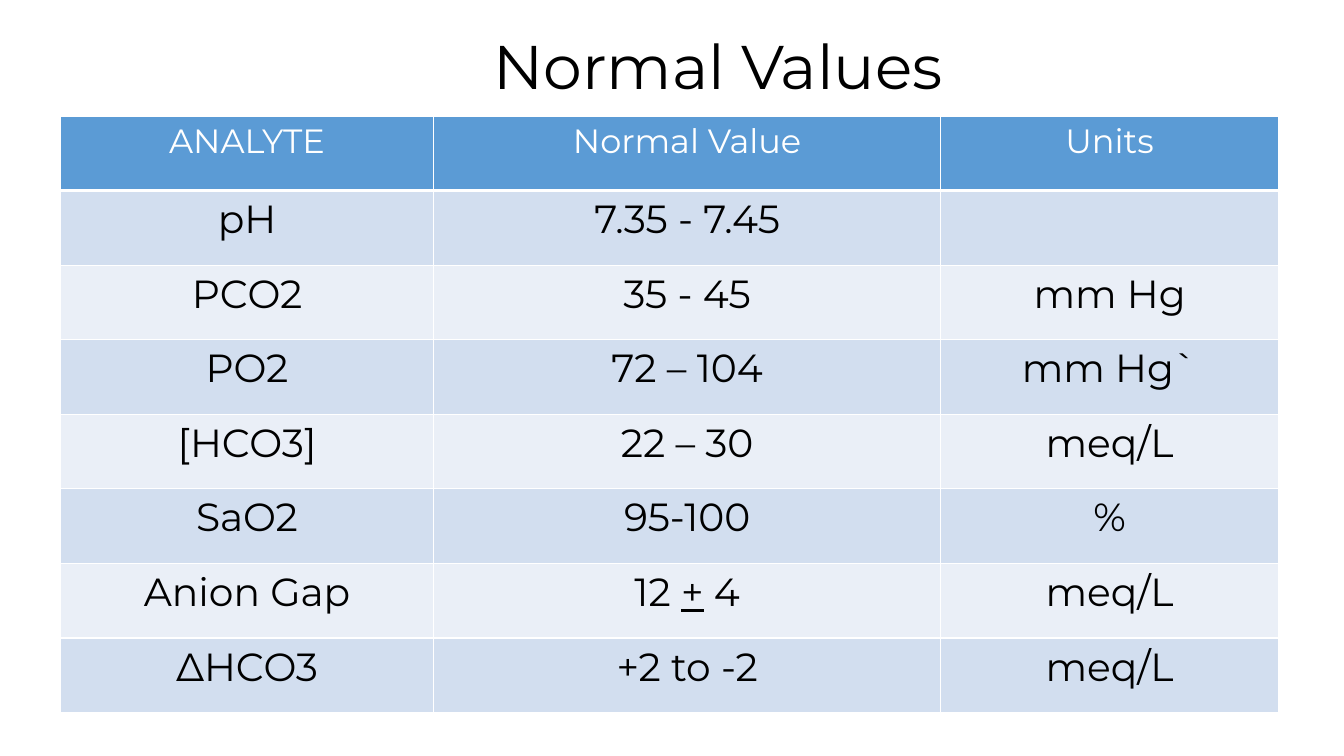
import pptx
import pptx.dml.color
import pptx.enum.text
import pptx.oxml
import pptx.oxml.ns
import pptx.util

RGBColor = pptx.dml.color.RGBColor
BLACK = RGBColor(0x00, 0x00, 0x00)
WHITE = RGBColor(0xFF, 0xFF, 0xFF)
HEADER_BLUE = RGBColor(0x5B, 0x9B, 0xD5)
BAND_DARK = RGBColor(0xD2, 0xDE, 0xEF)
BAND_LIGHT = RGBColor(0xEA, 0xEF, 0xF7)

FONT = "Montserrat"
SLIDE_WIDTH = pptx.util.Inches(13.33)
SLIDE_HEIGHT = pptx.util.Inches(7.5)
COLUMN_WIDTHS = [pptx.util.Inches(width) for width in (3.7, 5.03, 3.35)]
ROW_HEIGHT = pptx.util.Inches(0.74)

ANALYTES = [
    ("ANALYTE", "Normal Value", "Units"),
    ("pH", "7.35 - 7.45", ""),
    ("PCO2", "35 - 45", "mm Hg"),
    ("PO2", "72 – 104", "mm Hg`"),
    ("[HCO3]", "22 – 30", "meq/L"),
    ("SaO2", "95-100", "%"),
    ("Anion Gap", ("12 ", "+", " 4"), "meq/L"),
    ("∆HCO3", "+2 to -2", "meq/L"),
]


def format_paragraph(paragraph, size, color):
    paragraph.alignment = pptx.enum.text.PP_ALIGN.CENTER
    paragraph.font.name = FONT
    paragraph.font.size = pptx.util.Pt(size)
    paragraph.font.bold = False
    paragraph.font.color.rgb = color


def add_title(slide, text):
    box = slide.shapes.add_textbox(
        int(SLIDE_WIDTH * 0.211), int(SLIDE_HEIGHT * 0.04),
        int(SLIDE_WIDTH * 0.647), int(SLIDE_HEIGHT * 0.104))
    frame = box.text_frame
    frame.word_wrap = True
    frame.vertical_anchor = pptx.enum.text.MSO_ANCHOR.MIDDLE
    paragraph = frame.paragraphs[0]
    paragraph.text = text
    paragraph.line_spacing = 0.9
    format_paragraph(paragraph, 44, BLACK)


def add_border(cell, side, width):
    properties = cell._tc.get_or_add_tcPr()
    properties.append(pptx.oxml.parse_xml(
        f'<a:ln{side} {pptx.oxml.ns.nsdecls("a")} w="{pptx.util.Pt(width)}">'
        f'<a:solidFill><a:srgbClr val="{WHITE}"/></a:solidFill></a:ln{side}>'))


def fill_cell(cell, content, row):
    is_header = row == 0
    for side in "LRTB":
        thick = (is_header and side == "B") or (row == 1 and side == "T")
        add_border(cell, side, 3 if thick else 1)
    cell.fill.solid()
    band = BAND_DARK if row % 2 else BAND_LIGHT
    cell.fill.fore_color.rgb = HEADER_BLUE if is_header else band

    paragraph = cell.text_frame.paragraphs[0]
    format_paragraph(paragraph, 24 if is_header else 28,
                     WHITE if is_header else BLACK)
    if isinstance(content, str):
        paragraph.text = content
        return
    before, underlined, after = content
    paragraph.add_run().text = before
    symbol = paragraph.add_run()
    symbol.text = underlined
    symbol.font.underline = True
    paragraph.add_run().text = after


def add_values_table(slide, rows):
    table = slide.shapes.add_table(
        len(rows), len(COLUMN_WIDTHS),
        int(SLIDE_WIDTH * 0.045), int(SLIDE_HEIGHT * 0.1535),
        sum(COLUMN_WIDTHS), ROW_HEIGHT * len(rows)).table
    for column, width in zip(table.columns, COLUMN_WIDTHS):
        column.width = width
    for row_index, contents in enumerate(rows):
        table.rows[row_index].height = ROW_HEIGHT
        for column_index, content in enumerate(contents):
            fill_cell(table.cell(row_index, column_index), content, row_index)


def main():
    presentation = pptx.Presentation()
    presentation.slide_width = SLIDE_WIDTH
    presentation.slide_height = SLIDE_HEIGHT
    slide = presentation.slides.add_slide(presentation.slide_layouts[6])
    add_title(slide, "Normal Values")
    add_values_table(slide, ANALYTES)
    presentation.save("out.pptx")


if __name__ == "__main__":
    main()
